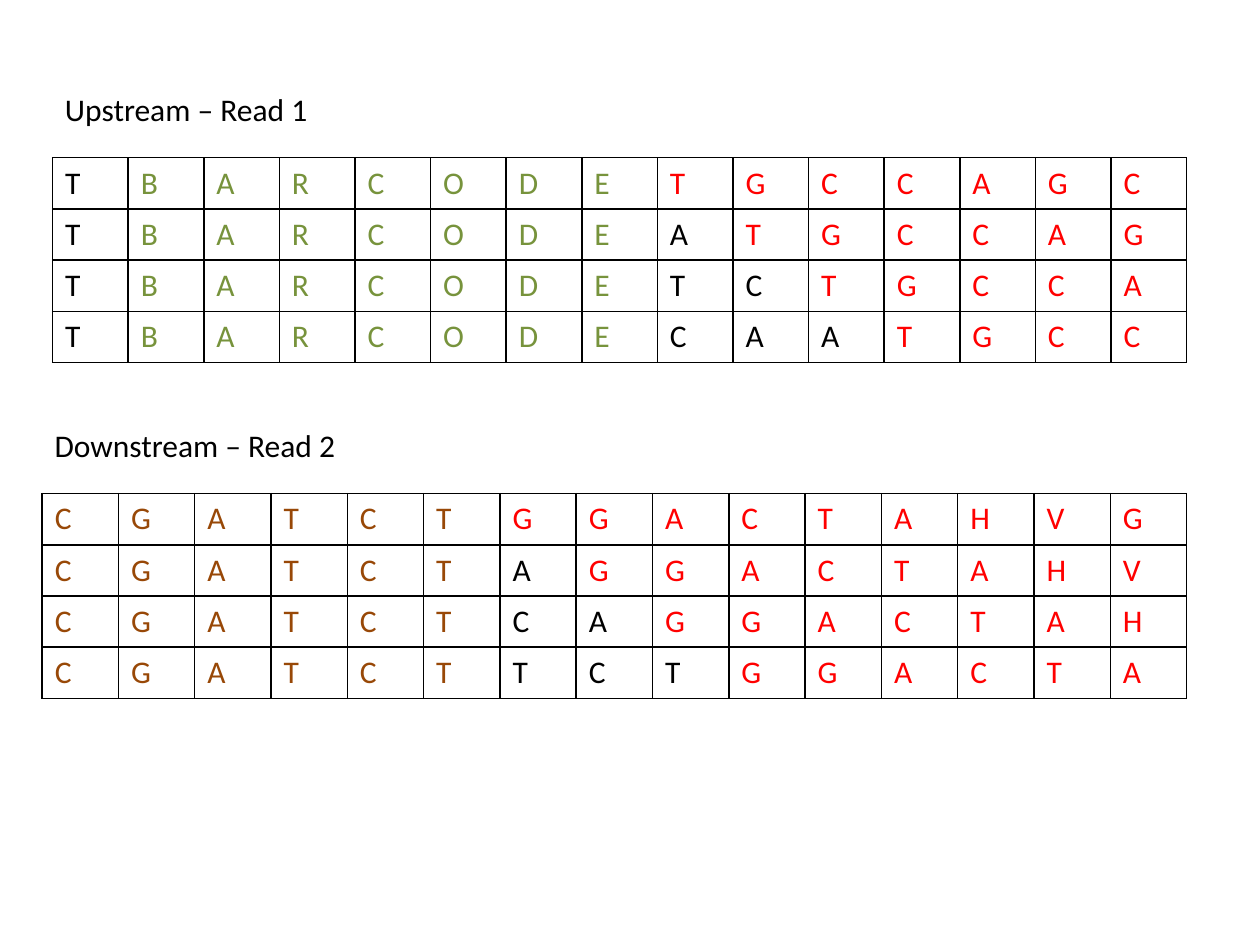
from lxml.etree import SubElement
from pptx import Presentation
from pptx.dml.color import RGBColor
from pptx.enum.text import MSO_AUTO_SIZE
from pptx.oxml.ns import qn
from pptx.util import Cm, Pt

BLACK, GREEN, RED, BROWN = "000000", "77933C", "FF0000", "984807"
READ_LENGTH = 15
TITLE_RISE = 1.48
TITLE_HEIGHT = 1.03
TABLE_HEIGHT = 4.13


def rgb(hex_string):
    return RGBColor.from_string(hex_string)


def write(text_frame, text, color):
    text_frame.text = text
    font = text_frame.paragraphs[0].runs[0].font
    font.name = "Calibri"
    font.size = Pt(18)
    font.color.rgb = rgb(color)


def add_borders(cell):
    properties = cell._tc.get_or_add_tcPr()
    for side in ("lnL", "lnR", "lnT", "lnB"):
        line = SubElement(properties, qn(f"a:{side}"), w=str(Pt(1)))
        fill = SubElement(line, qn("a:solidFill"))
        SubElement(fill, qn("a:srgbClr"), val=BLACK)


def colored_bases(segments):
    """Spread (sequence, color) segments into single bases, cut to the read length."""
    bases = [(base, color) for sequence, color in segments for base in sequence]
    return bases[:READ_LENGTH]


def add_title(slide, text, left, top, width):
    title = slide.shapes.add_textbox(Cm(left), Cm(top), Cm(width), Cm(TITLE_HEIGHT))
    title.text_frame.word_wrap = True
    title.text_frame.auto_size = MSO_AUTO_SIZE.SHAPE_TO_FIT_TEXT
    write(title.text_frame, text, BLACK)


def add_read(slide, title, title_width, left, top, width, adapter, spacers, primer):
    """Draw a titled table with one read per spacer; each spacer shifts the primer."""
    add_title(slide, title, left, top, title_width)
    table = slide.shapes.add_table(
        len(spacers), READ_LENGTH, Cm(left), Cm(top + TITLE_RISE),
        Cm(width), Cm(TABLE_HEIGHT)).table
    table.first_row = False
    table.horz_banding = False
    for row, spacer in enumerate(spacers):
        bases = colored_bases([*adapter, (spacer, BLACK), (primer, RED)])
        for column, (base, color) in enumerate(bases):
            cell = table.cell(row, column)
            write(cell.text_frame, base, color)
            add_borders(cell)
            cell.fill.background()


def main():
    presentation = Presentation()
    presentation.slide_width = Cm(25.4)
    presentation.slide_height = Cm(19.05)
    slide = presentation.slides.add_slide(presentation.slide_layouts[6])
    add_read(slide, "Upstream – Read 1", 6.99, 1.06, 1.7, 22.86,
             [("T", BLACK), ("BARCODE", GREEN)], ["", "A", "TC", "CAA"], "TGCCAGC")
    add_read(slide, "Downstream – Read 2", 8.68, 0.85, 8.47, 23.07,
             [("CGATCT", BROWN)], ["", "A", "CA", "TCT"], "GGACTAHVG")
    presentation.save("out.pptx")


if __name__ == "__main__":
    main()
